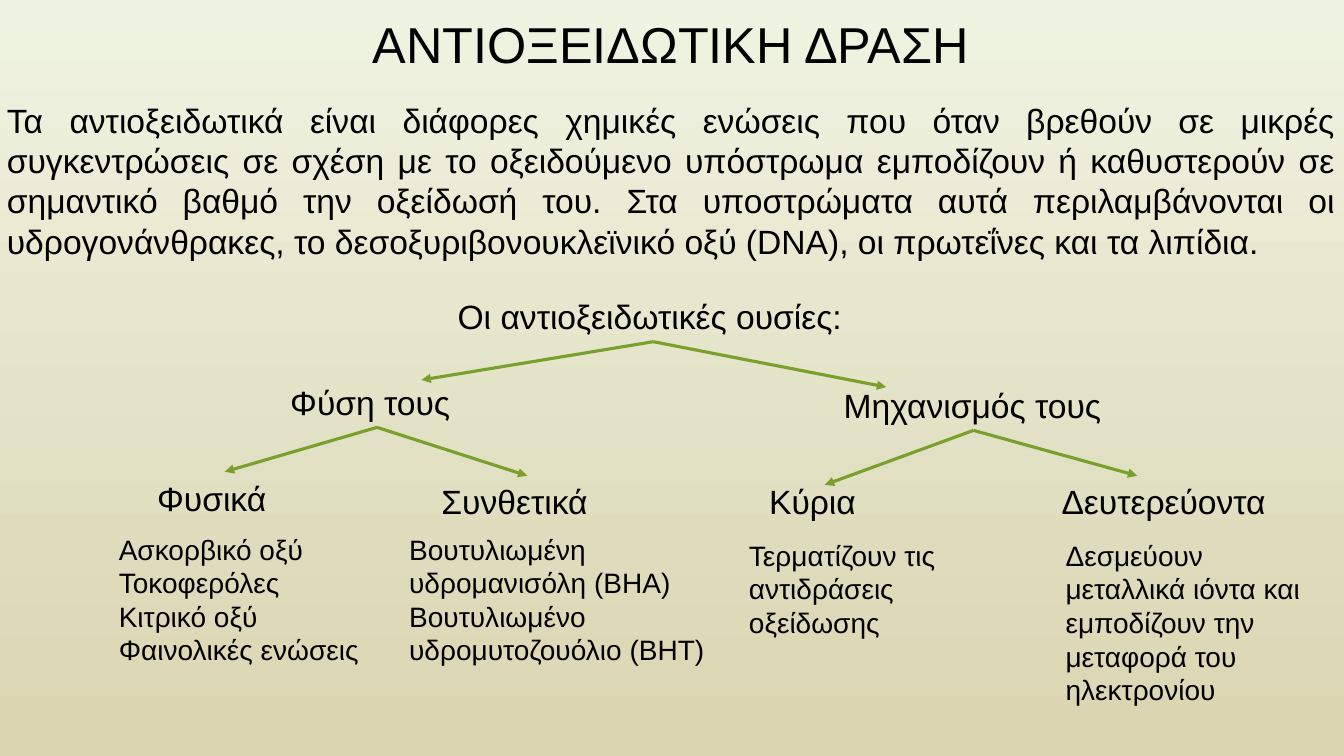
from pptx import Presentation, util as u
from pptx.dml.color import RGBColor
from pptx.enum import shapes, text
from pptx.oxml.ns import qn
from lxml import etree

# Content
TITLE = "ΑΝΤΙΟΞΕΙΔΩΤΙΚΗ ΔΡΑΣΗ"
INTRO = (
    "Τα αντιοξειδωτικά είναι διάφορες χημικές ενώσεις που όταν βρεθούν σε μικρές "
    "συγκεντρώσεις σε σχέση με το οξειδούμενο υπόστρωμα εμποδίζουν ή καθυστερούν "
    "σε σημαντικό βαθμό την οξείδωσή του. Στα υποστρώματα αυτά περιλαμβάνονται οι "
    "υδρογονάνθρακες, το δεσοξυριβονουκλεϊνικό οξύ (DNA), οι πρωτεΐνες και τα λιπίδια."
)

# Branches: label, box (left, top, width), arrow tips
BRANCHES = [
    ("Οι αντιοξειδωτικές ουσίες:", (4.44, 2.89, 4.08), [(4.18, 3.77), (8.79, 3.84)]),
    ("Φύση τους", (2.78, 3.74, 1.92), [(2.23, 4.68), (5.23, 4.72)]),
    ("Μηχανισμός τους", (8.27, 3.77, 2.77), [(8.18, 4.81), (11.28, 4.72)]),
    ("Φυσικά", (1.46, 4.69, 1.29), []),
    ("Συνθετικά", (4.28, 4.72, 1.89), []),
    ("Κύρια", (7.53, 4.72, 1.29), []),
    ("Δευτερεύοντα", (10.43, 4.72, 2.29), []),
]

# Details: paragraphs, box (left, top, width, height)
DETAILS = [
    (["Ασκορβικό οξύ", "Τοκοφερόλες", "Κιτρικό οξύ", "Φαινολικές ενώσεις"],
     (1.08, 5.23, 2.93, 1.45)),
    (["Βουτυλιωμένη υδρομανισόλη (BHA) Βουτυλιωμένο υδρομυτοζουόλιο (BHT)"],
     (3.96, 5.23, 3.19, 1.45)),
    (["Τερματίζουν τις αντιδράσεις οξείδωσης"], (7.33, 5.29, 2.06, 1.11)),
    (["Δεσμεύουν μεταλλικά ιόντα και εμποδίζουν την μεταφορά του ηλεκτρονίου"],
     (10.47, 5.29, 2.61, 1.78)),
]

THEME = dict(font="Arial", ink="000000", arrow="79A02C", sky="EFF4E2", sand="DAD4B0",
             title=36, body=24, small=20, line=2.25)
LABEL_H = 0.5


def color(key):
    return RGBColor.from_string(THEME[key])


def write(lines, box, size="body", align=text.PP_ALIGN.LEFT,
          anchor=text.MSO_ANCHOR.TOP, space=1.0, holder=None):
    place = [u.Inches(n) for n in box]
    shape = holder or slide.shapes.add_textbox(*place)
    shape.left, shape.top, shape.width, shape.height = place
    frame = shape.text_frame
    frame.word_wrap = True
    frame.auto_size = text.MSO_AUTO_SIZE.NONE
    frame.vertical_anchor = anchor
    frame.text = "\n".join(lines)
    for para in frame.paragraphs:
        para.alignment = align
        para.line_spacing = space
        font = para.runs[0].font
        font.name = THEME["font"]
        font.size = u.Pt(THEME[size])
        font.color.rgb = color("ink")


def arrow(start, tip):
    ends = [u.Inches(n) for n in start + tip]
    link = slide.shapes.add_connector(shapes.MSO_CONNECTOR.STRAIGHT, *ends)
    link.line.color.rgb = color("arrow")
    link.line.width = u.Pt(THEME["line"])
    etree.SubElement(link.line._get_or_add_ln(), qn("a:tailEnd"), type="triangle")
    etree.SubElement(link._element.spPr, qn("a:effectLst"))


# Slide and background
deck = Presentation()
deck.slide_width, deck.slide_height = u.Inches(13.33), u.Inches(7.5)
slide = deck.slides.add_slide(deck.slide_layouts[5])
fill = slide.background.fill
fill.gradient()
fill.gradient_angle = 270
for stop, key in zip(fill.gradient_stops, ("sky", "sand")):
    stop.color.rgb = color(key)

# Title and introduction
write([TITLE], (-0.03, 0, 13.37, 0.94), size="title", align=text.PP_ALIGN.CENTER,
      anchor=text.MSO_ANCHOR.MIDDLE, space=0.9, holder=slide.shapes.title)
write([INTRO], (-0.03, 0.94, 13.37, 1.72), align=text.PP_ALIGN.JUSTIFY)

# Tree: arrows leave the bottom centre of each label
for label, (left, top, width), tips in BRANCHES:
    write([label], (left, top, width, LABEL_H))
    for tip in tips:
        arrow((left + width / 2, top + LABEL_H), tip)

# Details under the leaves
for lines, box in DETAILS:
    write(lines, box, size="small")

deck.save("out.pptx")
